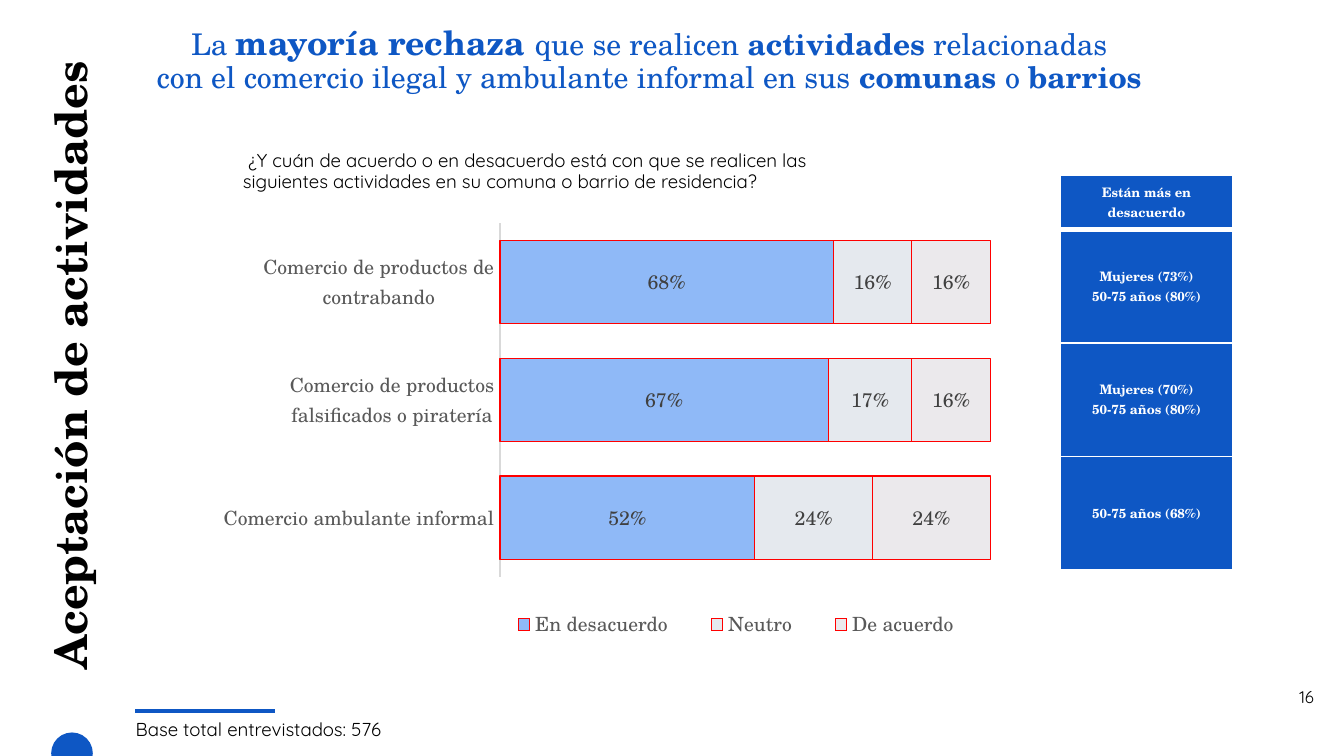
from lxml.etree import SubElement
from pptx import Presentation
from pptx.chart.data import CategoryChartData
from pptx.dml.color import RGBColor
from pptx.enum.chart import XL_CHART_TYPE, XL_LABEL_POSITION, XL_LEGEND_POSITION, XL_TICK_MARK
from pptx.enum.shapes import MSO_CONNECTOR, MSO_SHAPE
from pptx.enum.text import MSO_ANCHOR, MSO_AUTO_SIZE, PP_ALIGN
from pptx.oxml import parse_xml
from pptx.oxml.ns import nsdecls, qn
from pptx.util import Pt

COLORS = {"blue": "0E57C4", "black": "000000", "white": "FFFFFF", "label": "595959",
          "value": "404040", "axis": "D9D9D9", "outline": "FF0000"}
SERIF, SANS = "TeX Gyre Schola", "Quicksand"

TITLE = "Aceptación de actividades"
BASE = "Base total entrevistados: 576"
QUESTION = (" ¿Y cuán de acuerdo o en desacuerdo está con que se realicen las "
            "siguientes actividades en su comuna o barrio de residencia?")
PAGE_NUMBER = "16"
# Heading spans: text, size, bold
HEADING = [
    [("La ", 16, False), ("mayoría rechaza ", 18, True), ("que se realicen ", 16, False),
     ("actividades", 16, True), (" relacionadas", 16, False)],
    [("con el comercio ilegal y ambulante informal en sus ", 16, False),
     ("comunas ", 16, True), ("o ", 16, False), ("barrios", 16, True)],
]
CATEGORIES = ["Comercio ambulante informal",
              "Comercio de productos falsificados o piratería",
              "Comercio de productos de contrabando"]
SERIES = [("En desacuerdo", (0.52, 0.67, 0.68), "8FB9F7"),
          ("Neutro", (0.24, 0.17, 0.16), "E5E9EE"),
          ("De acuerdo", (0.24, 0.16, 0.16), "EBE9EC")]
GROUPS = [["Están más en desacuerdo"],
          ["Mujeres (73%)", "50-75 años (80%)"],
          ["Mujeres (70%)", "50-75 años (80%)"],
          ["50-75 años (68%)"]]
HEADER_HEIGHT, ROW_HEIGHT = 29.5, 60.7


def color(name):
    return RGBColor.from_string(COLORS.get(name, name))


def set_font(font, size, name, tint, bold=False):
    for key, value in {"size": Pt(size), "name": name, "bold": bold}.items():
        setattr(font, key, value)
    font.color.rgb = color(tint)


def set_place(shape, left, top, width, height):
    for key, value in {"left": left, "top": top, "width": width, "height": height}.items():
        setattr(shape, key, Pt(value))


def fill_frame(shape, lines, name, tint, align=PP_ALIGN.LEFT, spacing=0.9,
               anchor=MSO_ANCHOR.TOP, fit=MSO_AUTO_SIZE.NONE):
    """Write lines, each a list of (text, size, bold) spans."""
    frame = shape.text_frame
    for key, value in {"word_wrap": True, "auto_size": fit, "vertical_anchor": anchor}.items():
        setattr(frame, key, value)
    for index, spans in enumerate(lines):
        paragraph = frame.add_paragraph() if index else frame.paragraphs[0]
        for key, value in {"alignment": align, "line_spacing": spacing,
                           "space_before": Pt(0)}.items():
            setattr(paragraph, key, value)
        for text, size, bold in spans:
            span = paragraph.add_run()
            span.text = text
            set_font(span.font, size, name, tint, bold)


def add_text(page, place, *args, **options):
    box = page.shapes.add_textbox(*map(Pt, place))
    fill_frame(box, *args, **options)


def set_layout(parent, position, x, y, w, h, inner=False):
    """Give a chart part a fixed place, in fractions of the chart."""
    for old in parent.findall(qn("c:layout")):
        parent.remove(old)
    target = '<c:layoutTarget val="inner"/>' if inner else ""
    parent.insert(position, parse_xml(
        f'<c:layout {nsdecls("c")}><c:manualLayout>{target}'
        '<c:xMode val="edge"/><c:yMode val="edge"/>'
        f'<c:x val="{x}"/><c:y val="{y}"/><c:w val="{w}"/><c:h val="{h}"/>'
        '</c:manualLayout></c:layout>'))


def add_decoration(page):
    dot = page.shapes.add_shape(MSO_SHAPE.OVAL, Pt(27.4), Pt(392.4), Pt(22.3), Pt(22.3))
    dot.shadow.inherit = False
    dot.fill.solid()
    dot.fill.fore_color.rgb = color("blue")
    dot.line.fill.background()
    rule = page.shapes.add_connector(MSO_CONNECTOR.STRAIGHT, Pt(72.5), Pt(381), Pt(147.5), Pt(381))
    rule.line.color.rgb = color("blue")
    rule.line.width = Pt(1.75)
    SubElement(rule._element.spPr, qn("a:effectLst"))


def add_opinion_chart(page):
    data = CategoryChartData(number_format="0%")
    data.categories = CATEGORIES
    for name, values, _ in SERIES:
        data.add_series(name, values)
    chart = page.shapes.add_chart(XL_CHART_TYPE.BAR_STACKED_100, Pt(102.3), Pt(108.7),
                                  Pt(486.7), Pt(267.1), data).chart
    set_font(chart.font, 10.5, SERIF, "black")
    chart.has_title = False
    plot = chart.plots[0]
    for key, value in {"gap_width": 42, "overlap": 100, "vary_by_categories": False}.items():
        setattr(plot, key, value)

    for series, (_, _, tint) in zip(plot.series, SERIES):
        series.format.fill.solid()
        series.format.fill.fore_color.rgb = color(tint)
        series.format.line.color.rgb = color("outline")
        series.format.line.width = Pt(0.75)
        labels = series.data_labels
        for key, value in {"show_value": True, "number_format": "0%",
                           "number_format_is_linked": False,
                           "position": XL_LABEL_POSITION.CENTER}.items():
            setattr(labels, key, value)
        set_font(labels.font, 10.5, SERIF, "value")

    axis = chart.category_axis
    axis.major_tick_mark = axis.minor_tick_mark = XL_TICK_MARK.NONE
    axis.format.line.color.rgb = color("axis")
    axis.format.line.width = Pt(0.75)
    set_font(axis.tick_labels.font, 10.5, SERIF, "label")
    chart.value_axis.has_major_gridlines = False
    chart.value_axis.visible = False

    chart.has_legend = True
    legend = chart.legend
    legend.position = XL_LEGEND_POSITION.RIGHT
    legend.include_in_layout = False
    set_font(legend.font, 10.5, SERIF, "label")
    set_layout(legend._element, 1, 0.32, 0.8, 0.56, 0.09)
    set_layout(chart._chartSpace.chart.plotArea, 0, 0.34, 0.04, 0.54, 0.71, inner=True)


def add_border(cell, side, width):
    line = SubElement(cell._tc.get_or_add_tcPr(), qn(f"a:ln{side}"), w=str(Pt(width)))
    fill = SubElement(line, qn("a:solidFill"))
    SubElement(fill, qn("a:srgbClr"), val=COLORS["white"])


def add_group_table(page):
    height = HEADER_HEIGHT + ROW_HEIGHT * (len(GROUPS) - 1)
    table = page.shapes.add_table(len(GROUPS), 1, Pt(568.1), Pt(93.6), Pt(92.2), Pt(height)).table
    for index, lines in enumerate(GROUPS):
        table.rows[index].height = Pt(ROW_HEIGHT if index else HEADER_HEIGHT)
        cell = table.cell(index, 0)
        for side in "LRTB":
            thick = (index, side) in ((0, "B"), (1, "T"))
            add_border(cell, side, 3 if thick else 1)
        cell.fill.solid()
        cell.fill.fore_color.rgb = color("blue")
        cell.vertical_anchor = MSO_ANCHOR.MIDDLE
        cell.text = "\n".join(lines)
        for paragraph in cell.text_frame.paragraphs:
            paragraph.alignment = PP_ALIGN.CENTER
            set_font(paragraph.runs[0].font, 7, SERIF, "white", True)


def main():
    deck = Presentation()
    deck.slide_width, deck.slide_height = Pt(720), Pt(405)
    page = deck.slides.add_slide(deck.slide_layouts[1])
    add_decoration(page)

    title, body = page.placeholders
    set_place(title, -154.1, 183.6, 385.9, 24.5)
    title.rotation = 270
    fill_frame(title, [[(TITLE, 24, True)]], SERIF, "black",
               align=PP_ALIGN.CENTER, anchor=MSO_ANCHOR.MIDDLE)
    set_place(body, 65.5, 382.3, 362.9, 19.4)
    properties = body.text_frame.paragraphs[0]._p.get_or_add_pPr()
    properties.set("marL", "0")
    properties.set("indent", "0")
    SubElement(properties, qn("a:buNone"))
    fill_frame(body, [[(BASE, 10, False)]], SANS, "black")

    add_text(page, (38.9, 10.1, 617.8, 45.4), HEADING, SERIF, "blue", align=PP_ALIGN.CENTER,
             anchor=MSO_ANCHOR.MIDDLE, fit=MSO_AUTO_SIZE.TEXT_TO_FIT_SHAPE)
    add_text(page, (689, 364.3, 25.9, 25.2), [[(PAGE_NUMBER, 9, False)]], SANS, "black", spacing=1)
    add_opinion_chart(page)
    add_text(page, (123.1, 77.8, 342.7, 39.6), [[(QUESTION, 10, False)]], SANS, "black")
    add_group_table(page)
    deck.save("out.pptx")


if __name__ == "__main__":
    main()
